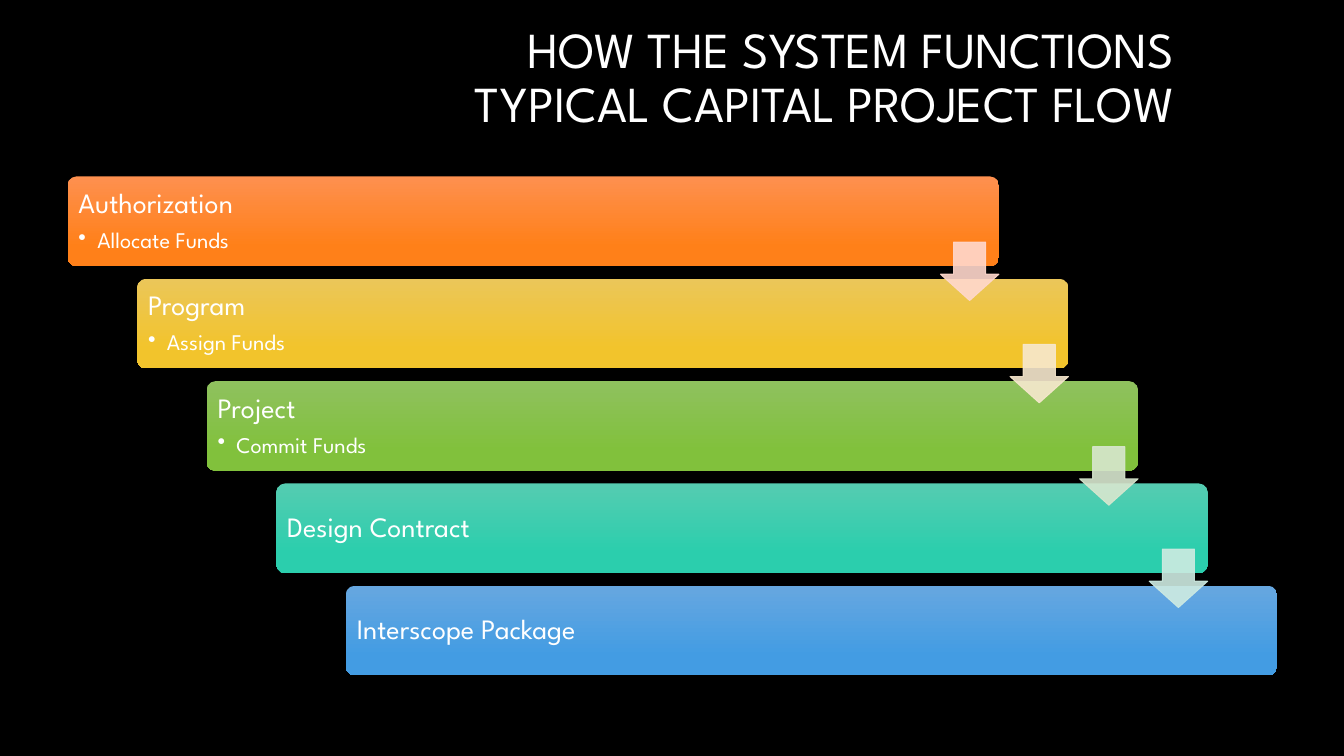
import pptx
import pptx.dml.color
import pptx.enum.shapes
import pptx.enum.text
import pptx.oxml
import pptx.oxml.ns
import pptx.util
from lxml import etree

Pt = pptx.util.Pt
SHAPES = pptx.enum.shapes.MSO_SHAPE
ALIGN = pptx.enum.text.PP_ALIGN
FONT = "League Spartan"
COLORS = {
    "background": "000000",
    "text": "FFFFFF",
    "orange": ("FE904F", "FF8019"),
    "yellow": ("EBC659", "F2C42C"),
    "green": ("8FC15E", "81C13C"),
    "teal": ("55CCB1", "2BCEAD"),
    "blue": ("66A7E0", "439CE3"),
    "orange arrow": "FFD8CD",
    "yellow arrow": "F7E8CE",
    "green arrow": "D8E7CF",
    "teal arrow": "CEEBE2",
}
STAGES = [
    ("Authorization", "Allocate Funds", "orange"),
    ("Program", "Assign Funds", "yellow"),
    ("Project", "Commit Funds", "green"),
    ("Design Contract", None, "teal"),
    ("Interscope Package", None, "blue"),
]
BAR_LEFT, BAR_TOP, BAR_WIDTH, BAR_HEIGHT = 48.24, 126, 665.28, 64.08
STEP_X, STEP_Y = 49.7, 73.1
ARROW_SIZE = 41.76
ARROW_DROP = 46.9


def rgb(value):
    return pptx.dml.color.RGBColor.from_string(value)


def add_bullet(paragraph, indent):
    properties = paragraph._p.get_or_add_pPr()
    properties.set("marL", str(Pt(indent)))
    properties.set("indent", str(-Pt(indent)))
    bullet = etree.SubElement(properties, pptx.oxml.ns.qn("a:buChar"))
    bullet.set("char", "•")


def write(paragraph, text, size, align=ALIGN.LEFT, space_after=0, bullet=False):
    paragraph.text = text
    paragraph.alignment = align
    paragraph.line_spacing = 0.9
    paragraph.space_before = Pt(0)
    paragraph.space_after = Pt(space_after)
    if bullet:
        paragraph.level = 1
        add_bullet(paragraph, 13.5)
    for run in paragraph.runs:
        run.font.name = FONT
        run.font.size = Pt(size)
        run.font.color.rgb = rgb(COLORS["text"])


def add_title(slide, text):
    title = slide.shapes.title
    title.left, title.top, title.width, title.height = Pt(114.5), Pt(15), Pt(731.5), Pt(83)
    frame = title.text_frame
    frame.auto_size = pptx.enum.text.MSO_AUTO_SIZE.NONE
    frame.vertical_anchor = pptx.enum.text.MSO_ANCHOR.MIDDLE
    write(frame.paragraphs[0], text, size=36, align=ALIGN.RIGHT)


def add_bar(slide, left, top, gradient):
    bar = slide.shapes.add_shape(
        SHAPES.ROUNDED_RECTANGLE, Pt(left), Pt(top), Pt(BAR_WIDTH), Pt(BAR_HEIGHT))
    bar.shadow.inherit = False
    bar.adjustments[0] = 0.1
    bar.line.fill.background()
    bar.fill.gradient()
    bar.fill.gradient_angle = 270
    for stop, position, color in zip(bar.fill.gradient_stops, (0, 0.78), gradient):
        stop.position = position
        stop.color.rgb = rgb(color)


def add_label(slide, left, top, width, heading, detail):
    box = slide.shapes.add_textbox(Pt(left), Pt(top), Pt(width), Pt(60.4))
    frame = box.text_frame
    frame.word_wrap = True
    frame.vertical_anchor = pptx.enum.text.MSO_ANCHOR.MIDDLE
    frame.margin_left = frame.margin_right = Pt(6)
    frame.margin_top = frame.margin_bottom = Pt(6)
    write(frame.paragraphs[0], heading, size=20, space_after=7)
    if detail:
        write(frame.add_paragraph(), detail, size=16, space_after=2.4, bullet=True)


def add_arrow(slide, left, top, color):
    arrow = slide.shapes.add_shape(
        SHAPES.DOWN_ARROW, Pt(left), Pt(top), Pt(ARROW_SIZE), Pt(ARROW_SIZE))
    arrow.shadow.inherit = False
    arrow.adjustments[0] = 0.55
    arrow.adjustments[1] = 0.45
    arrow.line.width = Pt(0.75)
    for fill in (arrow.fill, arrow.line.fill):
        fill.solid()
        fill.fore_color.rgb = rgb(color)
    for element in arrow._element.spPr.iter(pptx.oxml.ns.qn("a:srgbClr")):
        etree.SubElement(element, pptx.oxml.ns.qn("a:alpha")).set("val", "90000")


def main():
    presentation = pptx.Presentation()
    presentation.slide_width, presentation.slide_height = Pt(960), Pt(540)
    slide = presentation.slides.add_slide(presentation.slide_layouts[5])
    slide.background.fill.solid()
    slide.background.fill.fore_color.rgb = rgb(COLORS["background"])
    add_title(slide, "HOW THE SYSTEM FUNCTIONS\nTYPICAL CAPITAL PROJECT FLOW")

    corners = [(BAR_LEFT + i * STEP_X, BAR_TOP + i * STEP_Y) for i in range(len(STAGES))]
    for i, ((left, top), (heading, detail, color)) in enumerate(zip(corners, STAGES)):
        add_bar(slide, left, top, COLORS[color])
        label_width = 588 if i == 0 else 570
        add_label(slide, left + 1.8, top + 1.8, label_width, heading, detail)
    for (left, top), (_, _, color) in zip(corners[:-1], STAGES):
        add_arrow(slide, left + BAR_WIDTH - ARROW_SIZE, top + ARROW_DROP,
                  COLORS[color + " arrow"])
    presentation.save("out.pptx")


if __name__ == "__main__":
    main()
